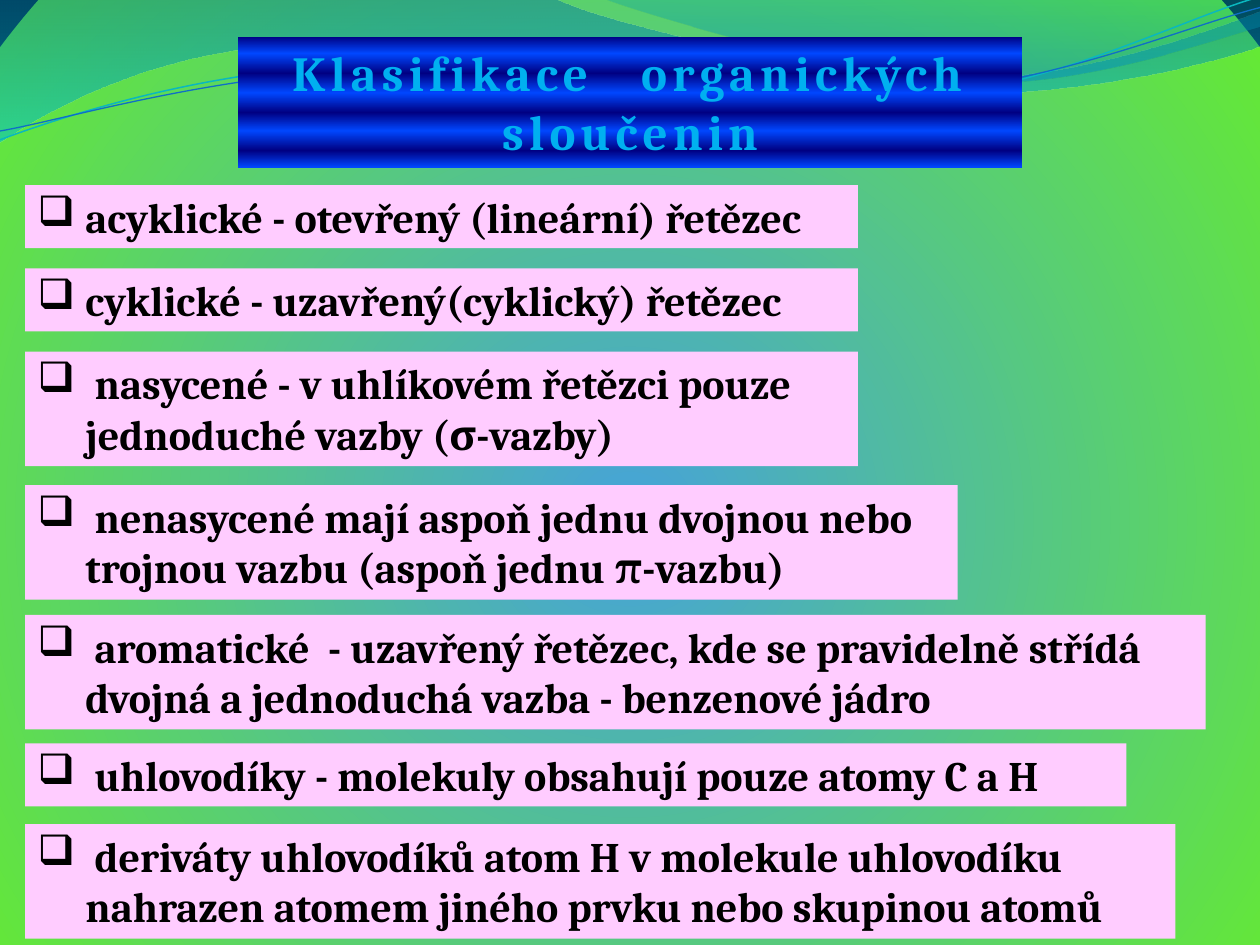
from lxml import etree
from pptx import Presentation
from pptx.dml.color import RGBColor
from pptx.enum.lang import MSO_LANGUAGE_ID
from pptx.enum.shapes import MSO_SHAPE
from pptx.enum.text import MSO_ANCHOR, PP_ALIGN
from pptx.oxml import parse_xml
from pptx.oxml.ns import nsdecls, qn
from pptx.util import Inches, Pt

PINK = RGBColor(0xFF, 0xCC, 0xFF)
BLACK = RGBColor(0x00, 0x00, 0x00)
SKY = RGBColor(0x00, 0xB0, 0xF0)
NAVY = RGBColor(0x00, 0x00, 0x82)
ROYAL = RGBColor(0x00, 0x47, 0xFF)
CENTRE_BLUE = RGBColor(0x46, 0xA2, 0xDA)
GREEN = RGBColor(0x64, 0xE9, 0x35)
MIDNIGHT = RGBColor(0x00, 0x28, 0x3C)
OCEAN = RGBColor(0x00, 0x74, 0xA1)
CYAN = RGBColor(0x00, 0xC6, 0xCF)
TEAL = RGBColor(0x00, 0xA1, 0xA9)
AZURE = RGBColor(0x00, 0x8B, 0xBF)
LINE_CYAN = RGBColor(0x0A, 0xB8, 0xBF)
LINE_BLUE = RGBColor(0x0F, 0x6F, 0xC6)

FONT = "Cambria"
DOWNWARD = '<a:lin ang="5400000" scaled="0"/>'
RADIAL = '<a:path path="circle"><a:fillToRect l="10000" t="110000" r="10000" b="100000"/></a:path>'

TITLE_STOPS = [(place, (NAVY, ROYAL)[index % 2], 100)
               for index, place in enumerate((0, 13, 28, 43, 58, 72, 87, 100))]

WAVES = [
    ([(0, 0), (4.4, -0.01), (4.76, 0.17, 6.64, 0.63, 7.58, 0.63),
      (8.53, 0.63, 9.58, 0.26, 10, 0.09), (10.01, 0.36),
      (9.83, 0.44, 8.7, 0.76, 7.46, 0.75), (6.22, 0.75, 3.82, 0.28, 2.57, 0.34),
      (1.29, 0.36, 0.46, 0.83, -0.01, 1.13), (0, 0)],
     [(0, OCEAN, 45), (100, CYAN, 55)]),
    ([(4.79, -0.01), (5.09, 0.11, 6.82, 0.62, 7.69, 0.65),
      (8.56, 0.69, 9.61, 0.32, 10, 0.21), (10, 0), (4.79, -0.01)],
     [(0, TEAL, 30), (80, AZURE, 45)]),
]
STRANDS = [
    ([(0, 1.11), (0.48, 0.93, 1.58, 0.57, 2.77, 0.52),
      (3.95, 0.47, 5.93, 0.89, 7.13, 0.8), (8.33, 0.71, 9.38, 0.15, 9.98, -0.02)],
     LINE_CYAN, 0.85),
    ([(0, 1.04), (0.47, 0.96, 1.64, 0.61, 2.83, 0.56),
      (4.03, 0.51, 5.97, 0.84, 7.17, 0.75), (8.36, 0.67, 9.41, 0.21, 10, 0.06)],
     LINE_BLUE, 0.75),
]

ONE_LINE, TWO_LINES = 0.5, 0.91
CLASSES = [
    (1.47, 6.61, ONE_LINE, "acyklické - otevřený (lineární) řetězec"),
    (2.13, 6.61, ONE_LINE, "cyklické - uzavřený(cyklický) řetězec"),
    (2.79, 6.61, TWO_LINES, " nasycené - v uhlíkovém řetězci pouze jednoduché vazby (σ-vazby)"),
    (3.85, 7.4, TWO_LINES,
     " nenasycené mají aspoň jednu dvojnou nebo trojnou vazbu (aspoň jednu π-vazbu)"),
    (4.88, 9.37, TWO_LINES,
     " aromatické  - uzavřený řetězec, kde se pravidelně střídá dvojná a jednoduchá vazba - benzenové jádro"),
    (5.9, 8.74, ONE_LINE, " uhlovodíky - molekuly obsahují pouze atomy C a H"),
    (6.54, 9.13, TWO_LINES,
     " deriváty uhlovodíků atom H v molekule uhlovodíku nahrazen atomem jiného prvku nebo skupinou atomů"),
]


def gradient(stops, direction):
    marks = "".join(
        f'<a:gs pos="{place * 1000}"><a:srgbClr val="{color}">'
        f'<a:alpha val="{opacity * 1000}"/></a:srgbClr></a:gs>'
        for place, color, opacity in stops)
    return parse_xml(f'<a:gradFill {nsdecls("a")} rotWithShape="1">'
                     f'<a:gsLst>{marks}</a:gsLst>{direction}</a:gradFill>')


def fill_gradient(shape, stops):
    shape.fill.solid()
    solid = shape._element.spPr.find(qn("a:solidFill"))
    solid.getparent().replace(solid, gradient(stops, DOWNWARD))


def paint_background(page):
    page.background.fill.solid()
    solid = page._element.cSld.find(".//" + qn("a:solidFill"))
    stops = [(0, CENTRE_BLUE, 100), (100, GREEN, 100), (100, MIDNIGHT, 100)]
    solid.getparent().replace(solid, gradient(stops, RADIAL))


def bend(shape, segments):
    lines = iter(list(shape._element.iter(qn("a:lnTo"))))
    for segment in segments:
        first = next(lines)
        if len(segment) == 2:
            continue
        first.tag = qn("a:cubicBezTo")
        for _ in range(2):
            line = next(lines)
            first.append(line[0])
            line.getparent().remove(line)


def add_outline(page, left, top, outline, close):
    points = [(Inches(left + segment[at]), Inches(top + segment[at + 1]))
              for segment in outline for at in range(0, len(segment), 2)]
    builder = page.shapes.build_freeform(*points[0])
    builder.add_line_segments(points[1:], close=close)
    shape = builder.convert_to_shape()
    shape.shadow.inherit = False
    bend(shape, outline[1:])
    return shape


def add_waves(page, left, top):
    for outline, stops in WAVES:
        wave = add_outline(page, left, top, outline[:-1], True)
        fill_gradient(wave, stops)
        wave.line.fill.background()
    for outline, color, width in STRANDS:
        strand = add_outline(page, left, top, outline, False)
        strand.fill.background()
        strand.line.color.rgb = color
        strand.line.width = Pt(width)


def add_panel(page, left, top, width, height, text, size, color):
    box = page.shapes.add_shape(MSO_SHAPE.RECTANGLE, Inches(left), Inches(top),
                                Inches(width), Inches(height))
    box.shadow.inherit = False
    box.line.fill.background()
    box.text_frame.word_wrap = True
    box.text_frame.vertical_anchor = MSO_ANCHOR.TOP
    para = box.text_frame.paragraphs[0]
    span = para.add_run()
    span.text = text
    span.font.language_id = MSO_LANGUAGE_ID.CZECH
    para.alignment = PP_ALIGN.LEFT
    para.font.name = FONT
    para.font.size = Pt(size)
    para.font.bold = True
    para.font.color.rgb = color
    return box, para


def add_title(page, left, top, width, height):
    box, para = add_panel(page, left, top, width, height,
                          "Klasifikace   organických sloučenin", 28, SKY)
    fill_gradient(box, TITLE_STOPS)
    para.alignment = PP_ALIGN.CENTER
    para.runs[0].font._element.set("spc", "300")


def add_class(page, left, top, width, height, text):
    box, para = add_panel(page, left, top, width, height, text, 24, BLACK)
    box.fill.solid()
    box.fill.fore_color.rgb = PINK
    properties = para._p.get_or_add_pPr()
    properties.set("marL", str(Inches(0.38)))
    properties.set("indent", str(-Inches(0.38)))
    properties.insert(0, etree.Element(qn("a:buFont"), typeface="Wingdings", charset="2"))
    properties.insert(1, etree.Element(qn("a:buChar"), char="q"))


def main():
    deck = Presentation()
    deck.slide_width, deck.slide_height = Inches(10), Inches(7.5)
    page = deck.slides.add_slide(deck.slide_layouts[6])
    paint_background(page)
    add_waves(page, 0, 0)
    add_title(page, 1.89, 0.29, 6.22, 1.04)
    for top, width, height, text in CLASSES:
        add_class(page, 0.2, top, width, height, text)
    deck.save("out.pptx")


if __name__ == "__main__":
    main()
